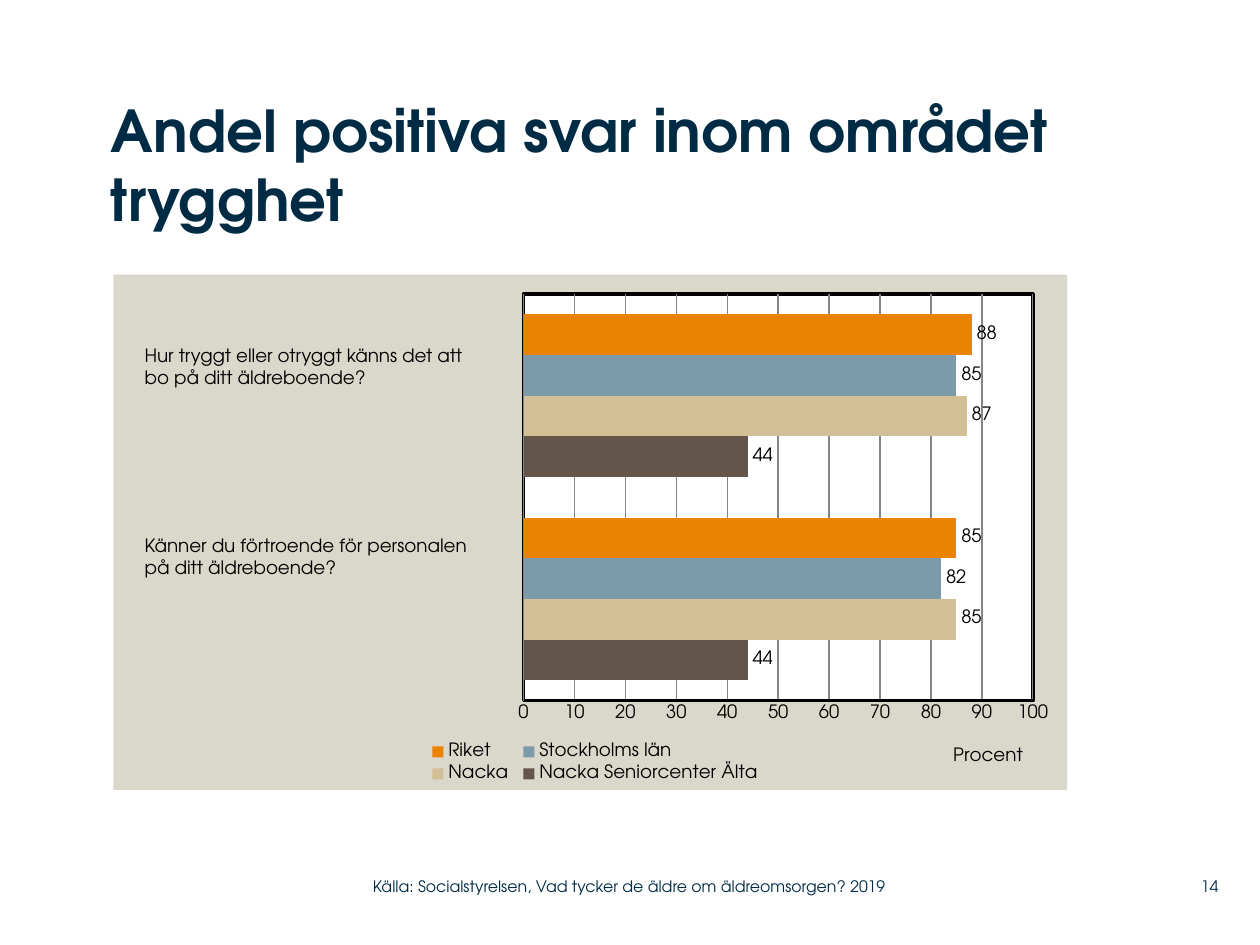
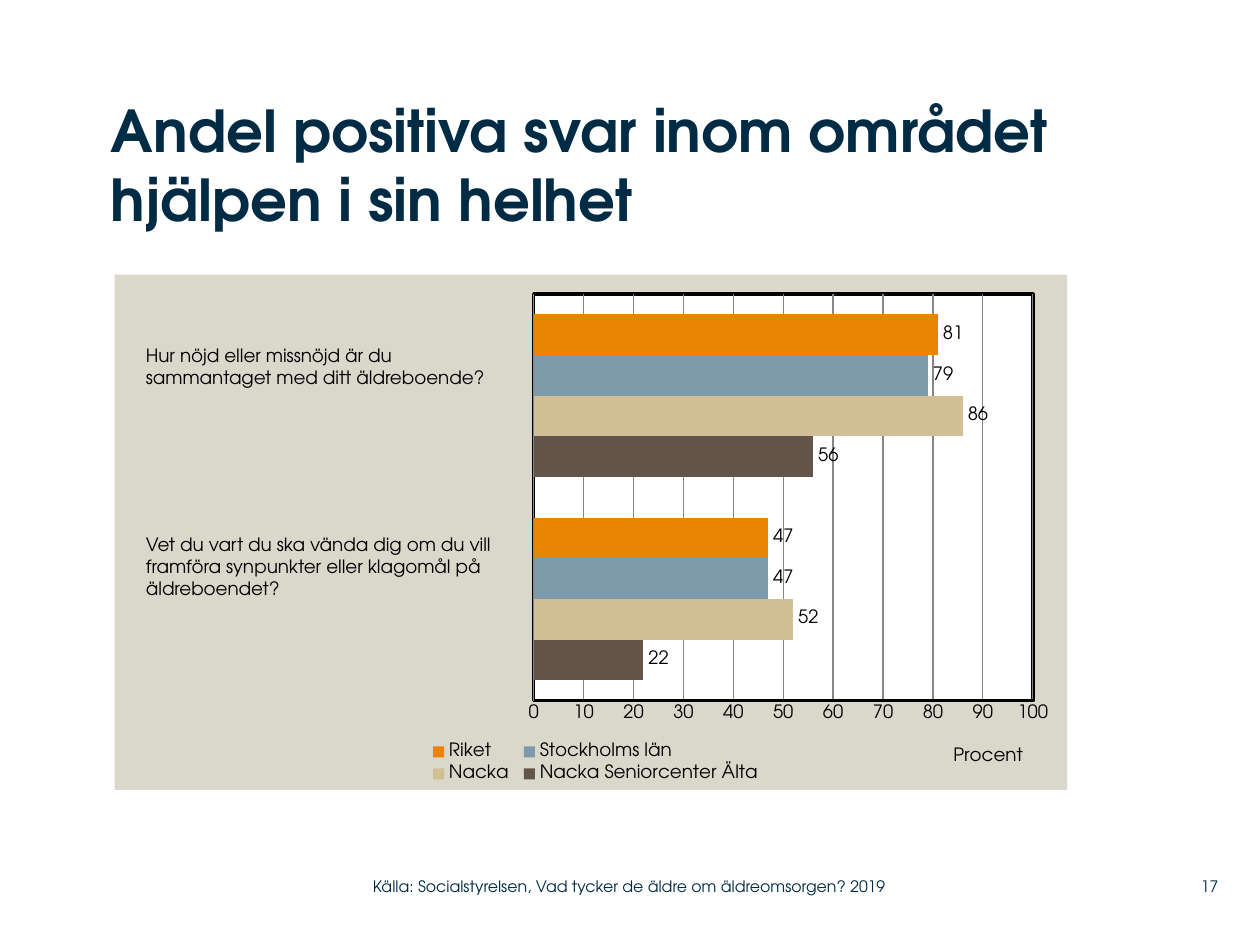
from dataclasses import dataclass

from pptx import Presentation
from pptx.chart.data import CategoryChartData
from pptx.dml.color import RGBColor
from pptx.enum.chart import XL_CHART_TYPE, XL_LABEL_POSITION, XL_LEGEND_POSITION, XL_TICK_MARK
from pptx.enum.text import MSO_ANCHOR, PP_ALIGN
from pptx.oxml import parse_xml
from pptx.oxml.ns import nsdecls, qn
from pptx.util import Pt

BARS = XL_CHART_TYPE.BAR_CLUSTERED
OUTSIDE_END = XL_LABEL_POSITION.OUTSIDE_END
BOTTOM = XL_LEGEND_POSITION.BOTTOM
NO_TICK = XL_TICK_MARK.NONE
TOP, MIDDLE = MSO_ANCHOR.TOP, MSO_ANCHOR.MIDDLE
LEFT, RIGHT = PP_ALIGN.LEFT, PP_ALIGN.RIGHT

EMU_PER_PX = 9144  # 100 px to the inch
SLIDE_WIDTH, SLIDE_HEIGHT = 1000, 750
CHART_TOP, CHART_HEIGHT = 218, 409
FOOTER_TOP, FOOTER_HEIGHT = 689, 29
SOURCE = "Källa: Socialstyrelsen, Vad tycker de äldre om äldreomsorgen? 2019"


@dataclass(frozen=True)
class Theme:
    font: str = "TeX Gyre Adventor"
    navy: str = "002B45"
    black: str = "000000"
    panel: str = "DAD7CB"
    plot: str = "FFFFFF"
    grid: str = "868686"
    title_size: float = 33
    body_size: float = 10.5
    footer_size: float = 9
    frame_width: float = 2
    grid_width: float = 0.75


THEME = Theme()
SERIES_COLORS = {
    "Nacka Seniorcenter Älta": "635549",
    "Nacka": "D3BF96",
    "Stockholms län": "7D9AAA",
    "Riket": "E98300",
}

# Values follow SERIES_COLORS; each pair runs from the lower question to the upper one.
SLIDES = [
    {
        "title": "Andel positiva svar inom området trygghet",
        "number": "14",
        "chart": {"left": 90, "width": 757, "plot_left": 0.43, "plot_width": 0.534},
        "values": [(44, 44), (85, 87), (82, 85), (85, 88)],
        "questions": [
            ("Hur tryggt eller otryggt känns det att bo på ditt äldreboende?",
             (105, 268, 294, 45)),
            ("Känner du förtroende för personalen\npå ditt äldreboende?",
             (105, 419, 293, 45)),
        ],
    },
    {
        "title": "Andel positiva svar inom området hjälpen i sin helhet",
        "number": "17",
        "chart": {"left": 91, "width": 756, "plot_left": 0.44, "plot_width": 0.524},
        "values": [(22, 56), (52, 86), (47, 79), (47, 81)],
        "questions": [
            ("Hur nöjd eller missnöjd är du\nsammantaget med ditt äldreboende?",
             (106, 268, 298, 45)),
            ("Vet du vart du ska vända dig om du vill framföra synpunkter "
             "eller klagomål på äldreboendet?",
             (106, 418, 297, 63)),
        ],
    },
]


def px(*lengths):
    return [length * EMU_PER_PX for length in lengths]


def set_format(target, values):
    for name, value in values.items():
        setattr(target, name, value)


def shape_properties(fill, line=""):
    """Return a chart spPr element with a solid fill and, if given, a line colour."""
    outline = "<a:noFill/>"
    if line:
        outline = f'<a:solidFill><a:srgbClr val="{line}"/></a:solidFill>'
    return parse_xml(
        f'<c:spPr {nsdecls("c", "a")}><a:solidFill><a:srgbClr val="{fill}"/></a:solidFill>'
        f'<a:ln w="{Pt(THEME.frame_width)}">{outline}</a:ln></c:spPr>'
    )


def set_layout(element, predecessor=None, inner=False, **fractions):
    """Place a chart part by hand, with the layout element put after its predecessor."""
    for old in element.findall(qn("c:layout")):
        element.remove(old)
    target = '<c:layoutTarget val="inner"/>' if inner else ""
    modes = "".join(f'<c:{axis}Mode val="edge"/>' for axis in "xy")
    sizes = "".join(f'<c:{name} val="{value}"/>' for name, value in fractions.items())
    layout = parse_xml(
        f'<c:layout {nsdecls("c")}><c:manualLayout>{target}{modes}{sizes}'
        "</c:manualLayout></c:layout>"
    )
    if predecessor:
        element.find(qn(predecessor)).addnext(layout)
    else:
        element.insert(0, layout)


class Deck:
    def __init__(self, theme):
        self.theme = theme
        self.presentation = Presentation()
        width, height = px(SLIDE_WIDTH, SLIDE_HEIGHT)
        set_format(self.presentation, {"slide_width": width, "slide_height": height})
        self.slide = None

    def add_slide(self):
        blank = self.presentation.slide_layouts[6]
        self.slide = self.presentation.slides.add_slide(blank)

    def set_font(self, font, size, color, bold=False):
        set_format(font, {"name": self.theme.font, "size": Pt(size), "bold": bold})
        font.color.rgb = RGBColor.from_string(color)

    def add_text(self, text, box, size, color, bold=False, inset=True,
                 anchor=TOP, align=LEFT):
        frame = self.slide.shapes.add_textbox(*px(*box)).text_frame
        set_format(frame, {"word_wrap": True, "vertical_anchor": anchor})
        if not inset:
            sides = ("left", "top", "right", "bottom")
            set_format(frame, {f"margin_{side}": 0 for side in sides})
        frame.text = text
        for paragraph in frame.paragraphs:
            paragraph.alignment = align
            for run in paragraph.runs:
                self.set_font(run.font, size, color, bold)

    def add_title(self, text):
        self.add_text(text, (88, 75, 760, 142), self.theme.title_size,
                      self.theme.navy, bold=True, inset=False)

    def add_question(self, text, box):
        self.add_text(text, box, self.theme.body_size, self.theme.black)

    def add_footer(self, number):
        for text, left, width, align in ((number, 920, 47, RIGHT), (SOURCE, 296, 443, LEFT)):
            self.add_text(text, (left, FOOTER_TOP, width, FOOTER_HEIGHT),
                          self.theme.footer_size, self.theme.navy,
                          inset=False, anchor=MIDDLE, align=align)

    def add_bar_chart(self, values, left, width, plot_left, plot_width):
        data = CategoryChartData()
        data.categories = ["1", "2"]
        for name, numbers in zip(SERIES_COLORS, values):
            data.add_series(name, numbers)
        box = px(left, CHART_TOP, width, CHART_HEIGHT)
        chart = self.slide.shapes.add_chart(BARS, *box, data).chart
        chart.has_title = False
        self.set_font(chart.font, self.theme.body_size, self.theme.black)
        self.style_bars(chart.plots[0])
        self.style_axes(chart)
        self.style_legend(chart)
        self.style_backgrounds(chart, plot_left, plot_width)

    def style_bars(self, plot):
        set_format(plot, {"gap_width": 100, "overlap": 0, "vary_by_categories": False})
        for series in plot.series:
            series.invert_if_negative = False
            series.format.fill.solid()
            series.format.fill.fore_color.rgb = RGBColor.from_string(SERIES_COLORS[series.name])
            labels = series.data_labels
            set_format(labels, {"show_value": True, "position": OUTSIDE_END})
            self.set_font(labels.font, self.theme.body_size, self.theme.black)

    def style_line(self, line, color, width):
        line.color.rgb = RGBColor.from_string(color)
        line.width = Pt(width)

    def style_axes(self, chart):
        theme = self.theme
        chart.category_axis.visible = False
        axis = chart.value_axis
        set_format(axis, {
            "minimum_scale": 0, "maximum_scale": 100, "major_unit": 10,
            "major_tick_mark": NO_TICK, "minor_tick_mark": NO_TICK,
            "has_major_gridlines": True,
        })
        self.style_line(axis.format.line, theme.black, theme.frame_width)
        self.style_line(axis.major_gridlines.format.line, theme.grid, theme.grid_width)
        self.set_font(axis.tick_labels.font, theme.body_size, theme.black)
        title = axis.axis_title
        title.text_frame.text = "Procent"
        run = title.text_frame.paragraphs[0].runs[0]
        self.set_font(run.font, theme.body_size, theme.black)
        set_layout(title._element, "c:tx", x=0.877, y=0.908)

    def style_legend(self, chart):
        chart.has_legend = True
        legend = chart.legend
        set_format(legend, {"position": BOTTOM, "include_in_layout": False})
        self.set_font(legend.font, self.theme.body_size, self.theme.black)
        set_layout(legend._element, "c:legendPos", x=0.325, y=0.9, w=0.36, h=0.095)

    def style_backgrounds(self, chart, plot_left, plot_width):
        chart_element = chart._chartSpace.find(qn("c:chart"))
        chart_element.addnext(shape_properties(self.theme.panel))
        plot_area = chart_element.find(qn("c:plotArea"))
        set_layout(plot_area, inner=True, x=plot_left, y=0.038, w=plot_width, h=0.789)
        plot_area.append(shape_properties(self.theme.plot, self.theme.black))


def main():
    deck = Deck(THEME)
    for content in SLIDES:
        deck.add_slide()
        deck.add_bar_chart(content["values"], **content["chart"])
        deck.add_title(content["title"])
        for text, box in content["questions"]:
            deck.add_question(text, box)
        deck.add_footer(content["number"])
    deck.presentation.save("out.pptx")


if __name__ == "__main__":
    main()
